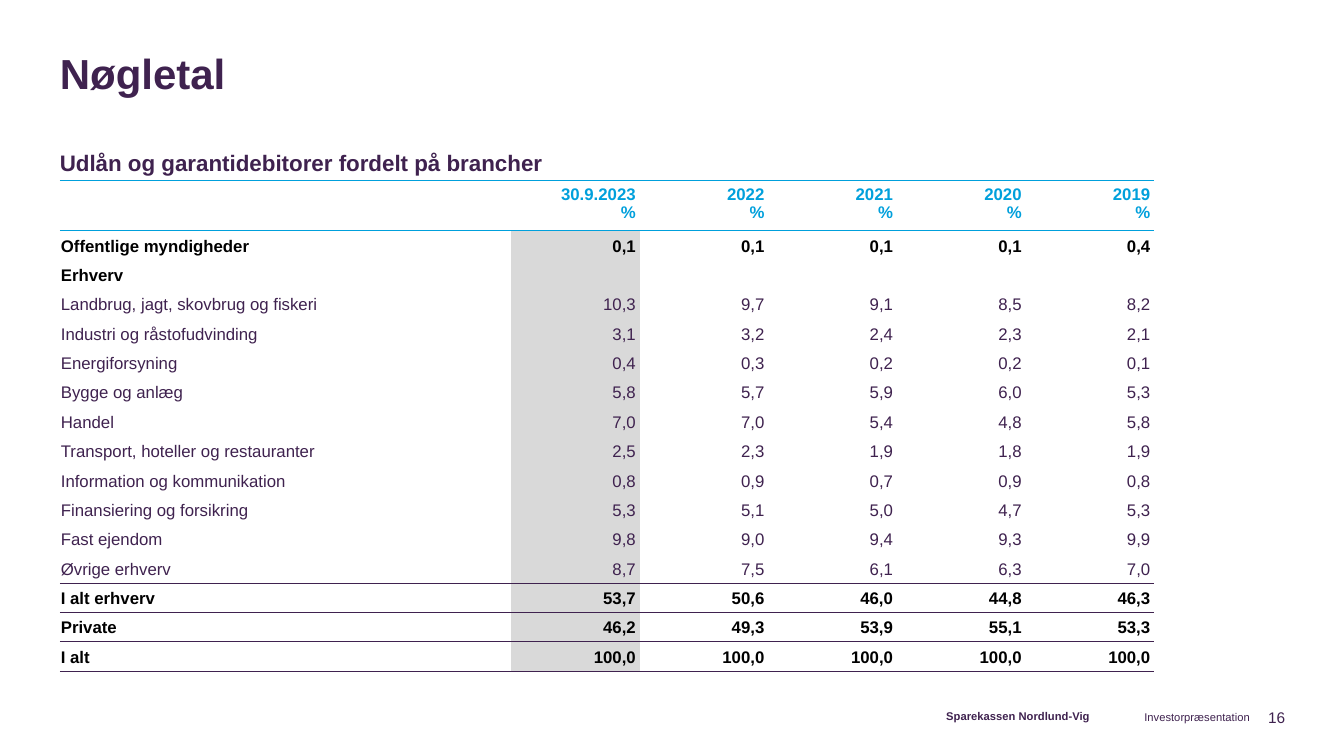
from dataclasses import dataclass

from lxml.etree import SubElement as Sub, Element
from pptx import Presentation
from pptx.dml.color import RGBColor
from pptx.enum.text import MSO_ANCHOR as Anchor, MSO_AUTO_SIZE as Fit, PP_ALIGN as Align
from pptx.oxml.ns import qn
from pptx.util import Emu, Pt

PLUM = RGBColor(0x3F, 0x22, 0x4F)
BLUE = RGBColor(0x00, 0xA0, 0xDC)
BLACK = RGBColor(0x00, 0x00, 0x00)
GREY = RGBColor(0xD9, 0xD9, 0xD9)

SCALE = 914400 / 192  # EMU in one px
NO_STYLE = "{2D5ABB26-0587-4C30-8999-92F81FD0307C}"
COLS = [860] + [245] * 5
ZERO = {"margin_left": 0, "margin_top": 0, "margin_right": 0, "margin_bottom": 0}


@dataclass(frozen=True)
class Rule:
    color: RGBColor
    width: float


@dataclass(frozen=True)
class Row:
    label: str
    values: str = ""
    bold: bool = False
    rule: Rule | None = None
    size: int = 12
    color: RGBColor = BLACK
    height: int = 56
    left: int = 2
    anchor: Anchor = Anchor.BOTTOM
    mark: bool = True


@dataclass(frozen=True)
class Note:
    text: str
    box: tuple[int, int, int, int]
    size: int
    bold: bool = False
    anchor: Anchor = Anchor.MIDDLE
    fit: Fit = Fit.NONE


THIN = Rule(PLUM, 0.25)
ROWS = [
    Row("Udlån og garantidebitorer fordelt på brancher", bold=True, rule=Rule(BLUE, 1),
        size=16, color=PLUM, height=73, left=0, mark=False),
    Row("", "30.9.2023\n%|2022\n%|2021\n%|2020\n%|2019\n%", True, color=BLUE,
        height=95, left=0, anchor=Anchor.TOP, mark=False),
    Row("Offentlige myndigheder", "0,1|0,1|0,1|0,1|0,4", True),
    Row("Erhverv", bold=True),
    Row("Landbrug, jagt, skovbrug og fiskeri", "10,3|9,7|9,1|8,5|8,2", color=PLUM),
    Row("Industri og råstofudvinding", "3,1|3,2|2,4|2,3|2,1", color=PLUM),
    Row("Energiforsyning", "0,4|0,3|0,2|0,2|0,1", color=PLUM),
    Row("Bygge og anlæg", "5,8|5,7|5,9|6,0|5,3", color=PLUM),
    Row("Handel", "7,0|7,0|5,4|4,8|5,8", color=PLUM),
    Row("Transport, hoteller og restauranter", "2,5|2,3|1,9|1,8|1,9", color=PLUM),
    Row("Information og kommunikation", "0,8|0,9|0,7|0,9|0,8", color=PLUM),
    Row("Finansiering og forsikring", "5,3|5,1|5,0|4,7|5,3", color=PLUM),
    Row("Fast ejendom", "9,8|9,0|9,4|9,3|9,9", color=PLUM),
    Row("Øvrige erhverv", "8,7|7,5|6,1|6,3|7,0", color=PLUM, rule=THIN),
    Row("I alt erhverv", "53,7|50,6|46,0|44,8|46,3", True, THIN),
    Row("Private", "46,2|49,3|53,9|55,1|53,3", True, THIN),
    Row("I alt", "100,0|100,0|100,0|100,0|100,0", True, THIN),
]
NOTES = [
    Note("Sparekassen Nordlund-Vig", (1567, 1352, 509, 25), 8, True, Anchor.TOP,
         Fit.SHAPE_TO_FIT_TEXT),
    Note("Investorpræsentation", (2081, 1327, 300, 77), 8),
    Note("16", (2385, 1327, 63, 77), 11),
]


def px(count: int) -> Emu:
    return Emu(round(count * SCALE))


def apply(target, form: dict) -> None:
    for name, value in form.items():
        setattr(target, name, value)


def style(frame, size: int, bold: bool, color: RGBColor, align: Align) -> None:
    """Format all paragraphs of a frame, and the end mark of empty ones."""
    for para in frame.paragraphs:
        para.alignment = align
        for run in para.runs:
            apply(run.font, {"name": "Arial", "size": Pt(size), "bold": bold})
            run.font.color.rgb = color
        if not para.runs:
            Sub(para._p, qn("a:endParaRPr"), sz=str(size * 100))


def place(shape, box: tuple[int, int, int, int]) -> None:
    sides = ("left", "top", "width", "height")
    apply(shape, dict(zip(sides, map(px, box))))


def edge(cell, tag: str, rule: Rule | None) -> None:
    """Put a line on one side of a cell, ahead of its fill."""
    if rule is None:
        return
    line = Element(qn(tag), w=str(Pt(rule.width)))
    fill = Sub(line, qn("a:solidFill"))
    Sub(fill, qn("a:srgbClr"), val=str(rule.color))
    cell._tc.get_or_add_tcPr().insert(0, line)


def add_title(slide) -> None:
    title = slide.shapes.title
    place(title, (114, 102, 1789, 109))
    frame = title.text_frame
    frame.text = "Nøgletal"
    apply(frame, ZERO | {"vertical_anchor": Anchor.TOP, "auto_size": Fit.NONE,
                         "word_wrap": True})
    frame.paragraphs[0].line_spacing = 0.9
    style(frame, 30, True, PLUM, Align.LEFT)


def add_note(slide, note: Note) -> None:
    frame = slide.shapes.add_textbox(*map(px, note.box)).text_frame
    frame.text = note.text
    apply(frame, ZERO | {"vertical_anchor": note.anchor, "auto_size": note.fit,
                         "word_wrap": True})
    style(frame, note.size, note.bold, PLUM, Align.RIGHT)


def add_grid(slide) -> None:
    high = sum(row.height for row in ROWS)
    box = map(px, (114, 271, sum(COLS), high))
    table = slide.shapes.add_table(len(ROWS), len(COLS), *box).table
    apply(table, {"first_row": False, "horz_banding": False})
    table._tbl.tblPr.find(qn("a:tableStyleId")).text = NO_STYLE
    for col, width in zip(table.columns, COLS):
        col.width = px(width)
    above = None
    for i, row in enumerate(ROWS):
        table.rows[i].height = px(row.height)
        texts = [row.label] + (row.values.split("|") if row.values else [""] * 5)
        for j, text in enumerate(texts):
            cell = table.cell(i, j)
            cell.text_frame.text = text
            apply(cell, {"margin_left": px(row.left), "margin_top": px(8),
                         "margin_right": px(8), "margin_bottom": px(8),
                         "vertical_anchor": row.anchor})
            style(cell.text_frame, row.size, row.bold, row.color,
                  Align.RIGHT if j else Align.LEFT)
            if row.mark and j == 1:
                cell.fill.solid()
                cell.fill.fore_color.rgb = GREY
            else:
                cell.fill.background()
            edge(cell, "a:lnB", row.rule)
            edge(cell, "a:lnT", above)
        above = row.rule
    table.cell(0, 0).merge(table.cell(0, 4))


def main() -> None:
    deck = Presentation()
    apply(deck, {"slide_width": px(2560), "slide_height": px(1440)})
    slide = deck.slides.add_slide(deck.slide_layouts[5])
    add_title(slide)
    for note in NOTES:
        add_note(slide, note)
    add_grid(slide)
    deck.save("out.pptx")


if __name__ == "__main__":
    main()
